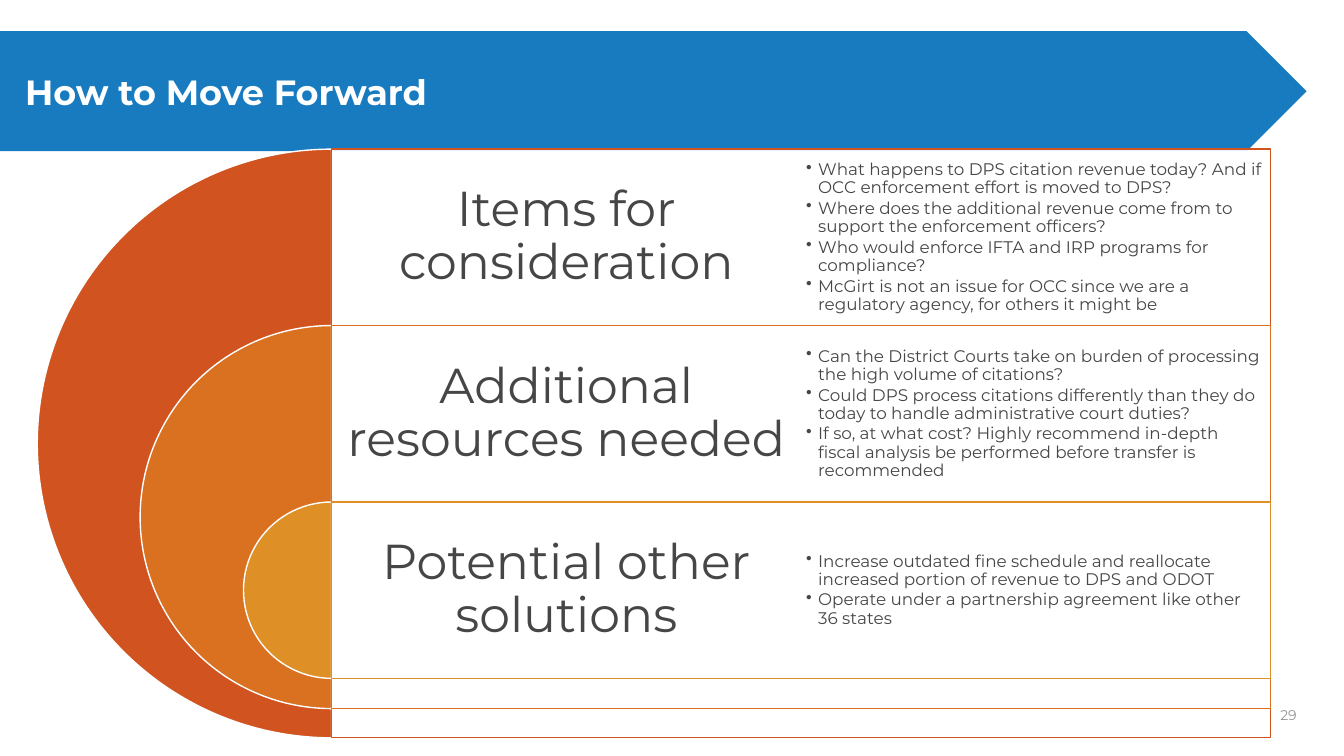
from lxml import etree
from pptx import Presentation
from pptx import util as u
from pptx.dml.color import RGBColor
from pptx.enum import shapes, text
from pptx.oxml.ns import qn

FONT = "Montserrat"
WHITE, BLUE, DARK, GREY = "FFFFFF", "187BC0", "464646", "949494"

# Nested rows: all arcs share one centre line, each row starts one step lower
CENTRE_X, TOP, ROW_HEIGHT = 3.29, 1.48, 1.75
PANEL_WIDTH = 9.31
COLUMN_WIDTH = PANEL_WIDTH / 2
ROWS = [
    ("Items for consideration", "D05320", 5.84, [
        "What happens to DPS citation revenue today? And if OCC enforcement effort is moved to DPS?",
        "Where does the additional revenue come from to support the enforcement officers?",
        "Who would enforce IFTA and IRP programs for compliance?",
        "McGirt is not an issue for OCC since we are a regulatory agency, for others it might be",
    ]),
    ("Additional resources needed", "D97121", 3.8, [
        "Can the District Courts take on burden of processing the high volume of citations?",
        "Could DPS process citations differently than they do today to handle administrative court duties?",
        "If so, at what cost? Highly recommend in-depth fiscal analysis be performed before transfer is recommended",
    ]),
    ("Potential other solutions", "DE9027", 1.75, [
        "Increase outdated fine schedule and reallocate increased portion of revenue to DPS and ODOT",
        "Operate under a partnership agreement like other 36 states",
    ]),
]


def rgb(colour):
    return RGBColor.from_string(colour)


def box(left, top, width, height):
    return [u.Inches(value) for value in (left, top, width, height)]


def add_shape(parent, kind, place, fill, line=None, opacity=None):
    shape = parent.add_shape(kind, *box(*place))
    shape.shadow.inherit = False
    shape.fill.solid()
    shape.fill.fore_color.rgb = rgb(fill)
    if opacity is not None:
        colour = shape.fill._xPr.find(qn("a:solidFill"))[0]
        etree.SubElement(colour, qn("a:alpha")).set("val", str(opacity * 1000))
    if line:
        shape.line.color.rgb = rgb(line)
        shape.line.width = u.Pt(1)
    else:
        shape.line.fill.background()
    return shape


def add_bullet(paragraph, indent=0.12):
    properties = paragraph._p.get_or_add_pPr()
    properties.set("marL", str(u.Inches(indent)))
    properties.set("indent", str(-u.Inches(indent)))
    etree.SubElement(properties, qn("a:buChar")).set("char", "•")


def write_text(shape, paragraphs, size, colour, bold=False, align=text.PP_ALIGN.LEFT,
               insets=(0.1, 0.05, 0.1, 0.05), line_spacing=None, space_after=None,
               bullets=False):
    frame = shape.text_frame
    frame.word_wrap = True
    frame.auto_size = text.MSO_AUTO_SIZE.NONE
    frame.vertical_anchor = text.MSO_ANCHOR.MIDDLE
    (frame.margin_left, frame.margin_top,
     frame.margin_right, frame.margin_bottom) = box(*insets)
    for index, words in enumerate(paragraphs):
        paragraph = frame.add_paragraph() if index else frame.paragraphs[0]
        paragraph.alignment = align
        if line_spacing:
            paragraph.line_spacing = line_spacing
        if space_after is not None:
            paragraph.space_after = u.Pt(space_after)
        if bullets:
            add_bullet(paragraph)
        run = paragraph.add_run()
        run.text = words
        run.font.name = FONT
        run.font.size = u.Pt(size)
        run.font.bold = bold
        run.font.color.rgb = rgb(colour)


def add_title(slide, words):
    band = add_shape(slide.shapes, shapes.MSO_SHAPE.PENTAGON, (0, 0.31, 12.96, 1.19), BLUE)
    title = slide.shapes.title
    title._element.addprevious(band._element)  # band goes behind the title
    title.left, title.top, title.width, title.height = box(0.25, 0.31, 12.66, 1.19)
    write_text(title, [words], 25, WHITE, bold=True, insets=(0, 0.05, 0.1, 0.05))


def add_row(group, top, heading, colour, diameter, points):
    # Half disc and the panel it opens onto
    pie = add_shape(group, shapes.MSO_SHAPE.PIE,
                    (CENTRE_X - diameter / 2, top, diameter, diameter), colour, line=WHITE)
    pie.adjustments[0], pie.adjustments[1] = 54, 162
    add_shape(group, shapes.MSO_SHAPE.RECTANGLE, (CENTRE_X, top, PANEL_WIDTH, diameter),
              WHITE, line=colour, opacity=90)

    # Heading column and bullet column
    heading_box = group.add_textbox(*box(CENTRE_X, top, COLUMN_WIDTH, ROW_HEIGHT))
    write_text(heading_box, [heading], 35, DARK, align=text.PP_ALIGN.CENTER,
               insets=(0.15,) * 4, line_spacing=0.9)
    points_box = group.add_textbox(
        *box(CENTRE_X + COLUMN_WIDTH, top, COLUMN_WIDTH, ROW_HEIGHT))
    write_text(points_box, points, 12, DARK, insets=(0.05,) * 4,
               line_spacing=0.9, space_after=1.8, bullets=True)


def main():
    presentation = Presentation()
    presentation.slide_width = u.Inches(13.33)
    presentation.slide_height = u.Inches(7.5)
    slide = presentation.slides.add_slide(presentation.slide_layouts[5])

    add_title(slide, "How to Move Forward")

    # Page number
    number = slide.shapes.add_textbox(*box(9.96, 6.98, 3, 0.22))
    write_text(number, ["29"], 10, GREY, align=text.PP_ALIGN.RIGHT)

    # Nested diagram
    diagram = slide.shapes.add_group_shape().shapes
    for index, row in enumerate(ROWS):
        add_row(diagram, TOP + index * ROW_HEIGHT, *row)

    presentation.save("out.pptx")


if __name__ == "__main__":
    main()
